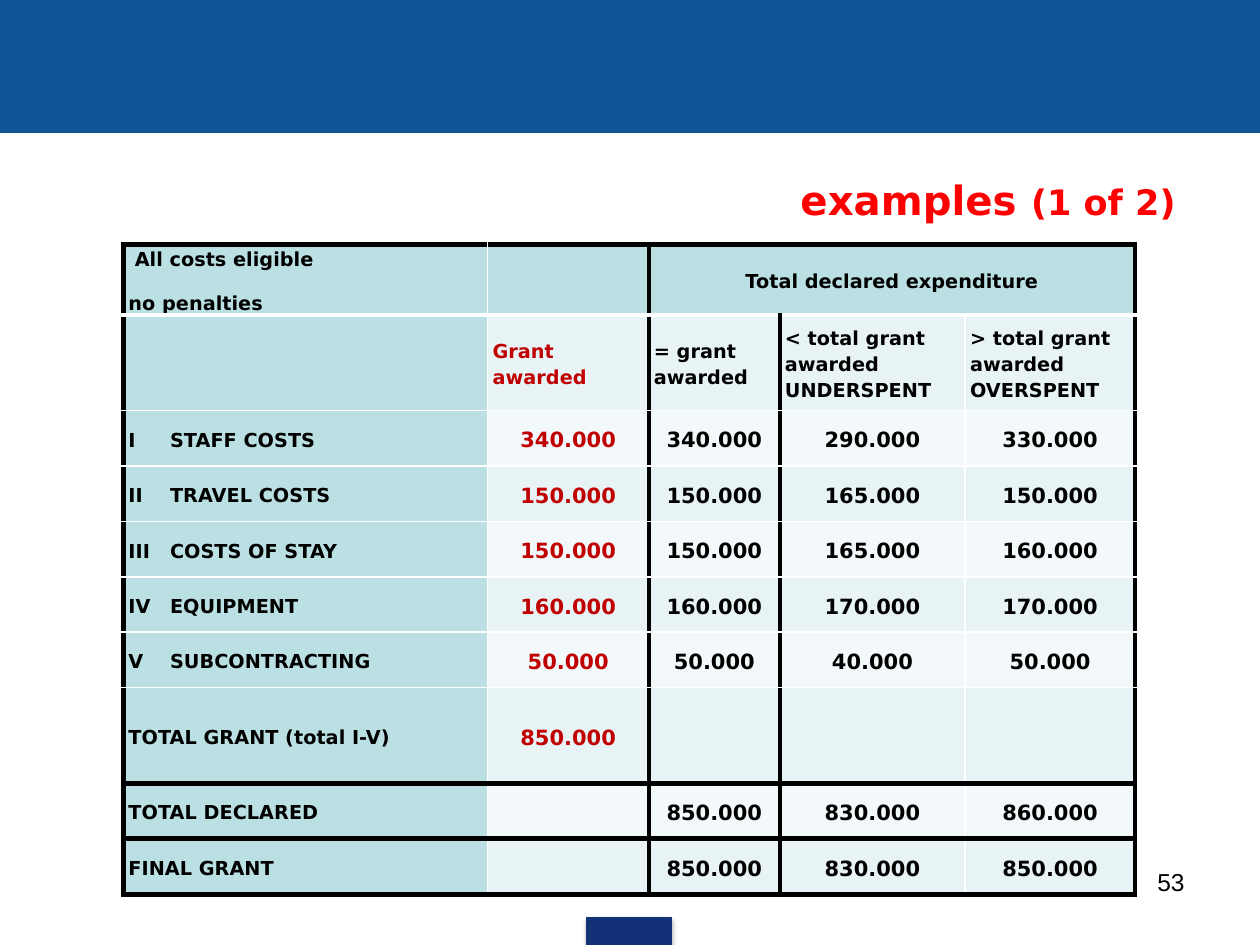
from dataclasses import dataclass
from typing import Any

from lxml import etree
from pptx import Presentation
from pptx import util as u
from pptx.dml.color import RGBColor
from pptx.enum import shapes, text
from pptx.oxml.ns import qn

GRID_COLUMNS, GRID_ROWS = 100, 75
BLACK, WHITE, RED, CRIMSON = "000000", "FFFFFF", "FF0000", "C00000"
HEADING_FILL, BAND_FILLS = "BBE0E3", ("F3F9FA", "E7F3F4")
SANS = "DejaVu Sans"
LEFT, CENTER, RIGHT = text.PP_ALIGN.LEFT, text.PP_ALIGN.CENTER, text.PP_ALIGN.RIGHT

COLUMN_SPANS = (28.9, 12.8, 10.4, 14.7, 13.5)
ROW_SPANS = (4.4, 7.6, 4.4, 4.4, 4.4, 4.4, 4.4, 7.6, 4.4, 4.4)
TABLE_ROWS = (
    ("All costs eligible\nno penalties", "", "Total declared expenditure", "", ""),
    ("", "Grant awarded", "= grant awarded", "< total grant awarded UNDERSPENT",
     "> total grant awarded OVERSPENT"),
    ("I\tSTAFF COSTS", "340.000", "340.000", "290.000", "330.000"),
    ("II\tTRAVEL COSTS", "150.000", "150.000", "165.000", "150.000"),
    ("III\tCOSTS OF STAY", "150.000", "150.000", "165.000", "160.000"),
    ("IV\tEQUIPMENT", "160.000", "160.000", "170.000", "170.000"),
    ("V\tSUBCONTRACTING", "50.000", "50.000", "40.000", "50.000"),
    ("TOTAL GRANT (total I-V)", "850.000", "", "", ""),
    ("TOTAL DECLARED", "", "850.000", "830.000", "860.000"),
    ("FINAL GRANT", "", "850.000", "830.000", "850.000"),
)


@dataclass(frozen=True)
class Area:
    column: float
    row: float
    columns: float
    rows: float


@dataclass(frozen=True)
class Block:
    area: Area
    color: str
    shadow: bool = False


@dataclass(frozen=True)
class Span:
    words: str
    size: float
    color: str = BLACK
    font: str = SANS
    bold: bool = True


@dataclass(frozen=True)
class Label:
    area: Area
    spans: tuple[Span, ...]
    anchor: Any
    indent: float = 0


@dataclass(frozen=True)
class Edge:
    color: str
    width: float


HEAVY, GAP, FINE = Edge(BLACK, 3), Edge(WHITE, 3), Edge(WHITE, 1)
BLOCKS = (
    Block(Area(0, 0, 100, 10.5), "0F5494"),
    Block(Area(46.6, 72.8, 6.7, 2.2), "133176", shadow=True),
)
LABELS = (
    Label(Area(71.7, 68.3, 23.3, 5.2), (Span("53", 14, font="Arial", bold=False),),
          text.MSO_ANCHOR.TOP),
    Label(Area(4.3, 13.1, 90, 5.5),
          (Span("examples ", 23, RED), Span("(1 of 2)", 20, RED)),
          text.MSO_ANCHOR.MIDDLE, indent=3.9),
)


def rgb(color: str) -> RGBColor:
    return RGBColor.from_string(color)


def grid(count: float) -> int:
    return u.Inches(count / 10)


def place(area: Area) -> tuple[int, ...]:
    return tuple(grid(n) for n in (area.column, area.row, area.columns, area.rows))


def assign(target: Any, values: dict[str, Any]) -> None:
    for name, value in values.items():
        setattr(target, name, value)


def add_span(para: Any, span: Span) -> None:
    run = para.add_run()
    run.text = span.words
    assign(run.font, {"name": span.font, "size": u.Pt(span.size), "bold": span.bold})
    run.font.color.rgb = rgb(span.color)


def draw_block(page: Any, block: Block) -> None:
    shape = page.shapes.add_shape(shapes.MSO_SHAPE.RECTANGLE, *place(block.area))
    shape.shadow.inherit = False
    shape.fill.solid()
    shape.fill.fore_color.rgb = rgb(block.color)
    shape.line.color.rgb = rgb(block.color)
    shape.line.width = u.Pt(0.75)
    if block.shadow:
        effects = shape._element.spPr.find(qn("a:effectLst"))
        outer = etree.SubElement(effects, qn("a:outerShdw"), blurRad=str(u.Pt(3.1)),
                                 dist=str(u.Pt(1.8)), dir="5400000", rotWithShape="0")
        tint = etree.SubElement(outer, qn("a:srgbClr"), val=BLACK)
        etree.SubElement(tint, qn("a:alpha"), val="35000")


def draw_label(page: Any, label: Label) -> None:
    box = page.shapes.add_textbox(*place(label.area))
    assign(box.text_frame, {"word_wrap": True, "vertical_anchor": label.anchor})
    para = box.text_frame.paragraphs[0]
    para.alignment = RIGHT
    if label.indent:
        para._p.get_or_add_pPr().set("marL", str(grid(label.indent)))
    for span in label.spans:
        add_span(para, span)


def vertical_edge(row: int, column: int) -> Edge:
    return HEAVY if column in (0, 2, 5) or (column == 3 and row > 0) else FINE


def horizontal_edge(row: int) -> Edge:
    return HEAVY if row in (0, 8, 9, 10) else GAP if row == 1 else FINE


def draw_edges(cell: Any, row: int, column: int) -> None:
    end = column + (cell.span_width if cell.is_merge_origin else 1)
    edges = {"L": vertical_edge(row, column), "R": vertical_edge(row, end),
             "T": horizontal_edge(row), "B": horizontal_edge(row + 1)}
    properties = cell._tc.get_or_add_tcPr()
    for side, edge in edges.items():
        line = etree.SubElement(properties, qn(f"a:ln{side}"), w=str(u.Pt(edge.width)))
        fill = etree.SubElement(line, qn("a:solidFill"))
        etree.SubElement(fill, qn("a:srgbClr"), val=edge.color)


def write_cell(cell: Any, words: str, row: int, column: int) -> None:
    figure = row > 1 and column > 0
    centred = figure or (row == 0 and column == 2)
    for index, line in enumerate(words.split("\n")):
        frame = cell.text_frame
        para = frame.add_paragraph() if index else frame.paragraphs[0]
        assign(para, {"alignment": CENTER if centred else LEFT,
                      "line_spacing": 1.15, "space_after": u.Pt(10)})
        properties = para._p.get_or_add_pPr()
        if row == column == index == 0:
            properties.set("indent", str(grid(0.5)))
        if "\t" in line:
            stops = etree.SubElement(properties, qn("a:tabLst"))
            etree.SubElement(stops, qn("a:tab"), pos=str(grid(3.3)), algn="l")
        add_span(para, Span(line, 12 if figure else 11, CRIMSON if column == 1 else BLACK))


def draw_table(page: Any) -> None:
    area = Area(9.8, 19.4, sum(COLUMN_SPANS), sum(ROW_SPANS))
    table = page.shapes.add_table(len(ROW_SPANS), len(COLUMN_SPANS), *place(area)).table
    assign(table, {"first_row": False, "horz_banding": False})
    for column, span in zip(table.columns, COLUMN_SPANS):
        column.width = grid(span)
    for row, span in zip(table.rows, ROW_SPANS):
        row.height = grid(span)
    table.cell(0, 2).merge(table.cell(0, 4))
    for row, entries in enumerate(TABLE_ROWS):
        for column, words in enumerate(entries):
            cell = table.cell(row, column)
            assign(cell, {"margin_left": grid(0.4), "margin_right": grid(0.4),
                          "margin_top": grid(0.1), "margin_bottom": 0,
                          "vertical_anchor": text.MSO_ANCHOR.MIDDLE})
            draw_edges(cell, row, column)
            cell.fill.solid()
            heading = row == 0 or column == 0
            cell.fill.fore_color.rgb = rgb(HEADING_FILL if heading else BAND_FILLS[row % 2])
            if words:
                write_cell(cell, words, row, column)


def main() -> None:
    deck = Presentation()
    deck.slide_width, deck.slide_height = grid(GRID_COLUMNS), grid(GRID_ROWS)
    page = deck.slides.add_slide(deck.slide_layouts[6])
    for block in BLOCKS:
        draw_block(page, block)
    draw_table(page)
    for label in LABELS:
        draw_label(page, label)
    deck.save("out.pptx")


if __name__ == "__main__":
    main()
